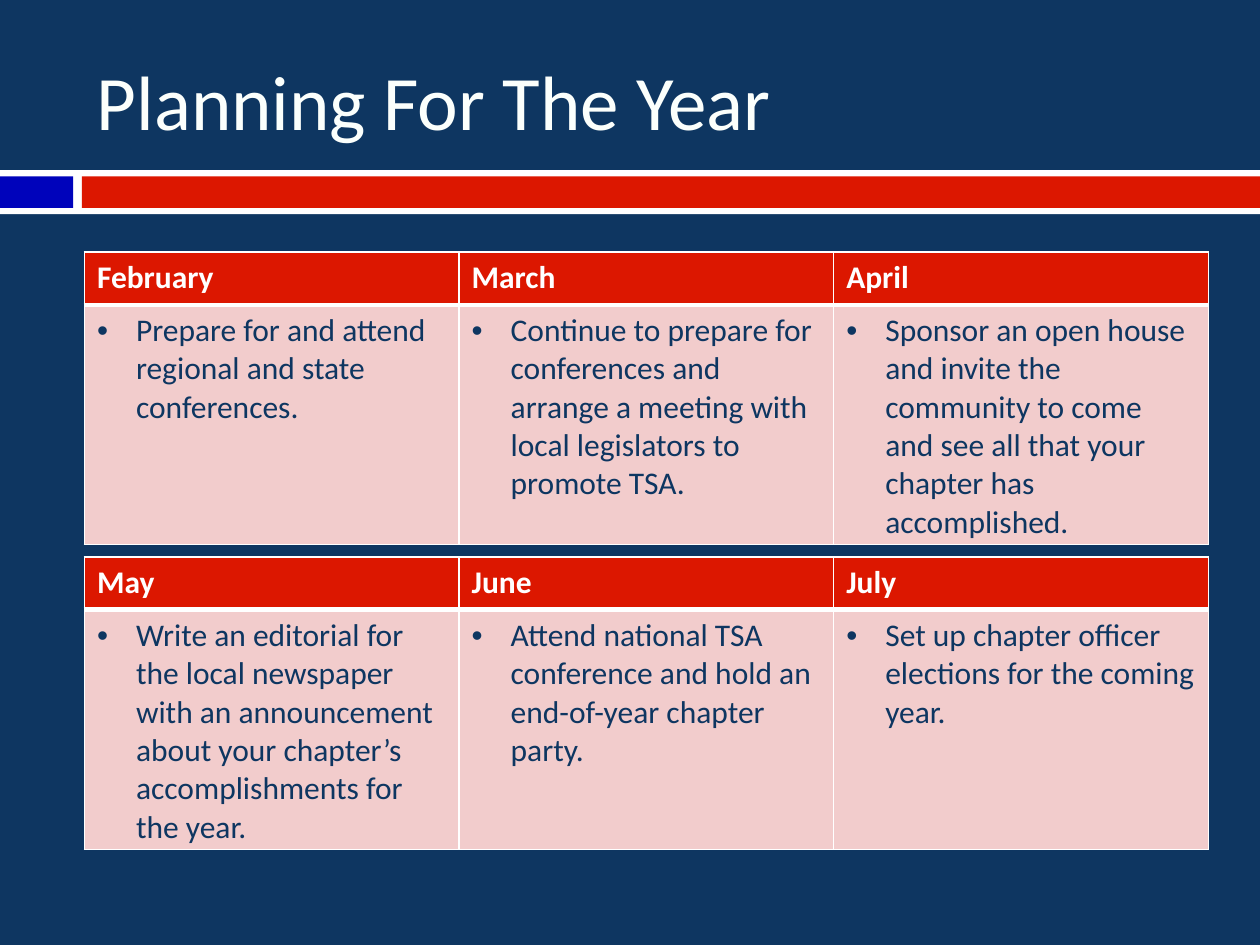
from dataclasses import dataclass

from lxml import etree
from pptx import Presentation
from pptx import util as u
from pptx.dml.color import RGBColor
from pptx.enum import shapes, text
from pptx.oxml.ns import qn

NAVY, RED, BLUE, PINK = "0E3661", "DC1700", "0003BB", "F2CCCC"
WHITE, OFF_WHITE = "FFFFFF", "FBFFFC"
LEFT, WIDTH = 0.67, 8.92
ROW_HEIGHTS = (0.42, 1.9)
INDENT = u.Inches(0.31)


@dataclass
class Bar:
    left: float
    top: float
    width: float
    height: float
    color: str


@dataclass
class Month:
    name: str
    task: str


BARS = [
    Bar(0, 1.35, 10, 0.35, WHITE),
    Bar(0, 1.4, 0.58, 0.25, BLUE),
    Bar(0.65, 1.4, 9.35, 0.25, RED),
]
SPRING = [
    Month("February", "Prepare for and attend regional and state conferences."),
    Month("March", "Continue to prepare for conferences and arrange a meeting "
                   "with local legislators to promote TSA."),
    Month("April", "Sponsor an open house and invite the community to come and "
                   "see all that your chapter has accomplished."),
]
SUMMER = [
    Month("May", "Write an editorial for the local newspaper with an announcement "
                 "about your chapter’s accomplishments for the year."),
    Month("June", "Attend national TSA conference and hold an end-of-year "
                  "chapter party."),
    Month("July", "Set up chapter officer elections for the coming year."),
]


def set_fill(fill, color: str) -> None:
    fill.solid()
    fill.fore_color.rgb = RGBColor.from_string(color)


def write(tf, content: str, *, size: float, color: str, bold: bool = False,
          bullet: bool = False) -> None:
    p = tf.paragraphs[0]
    if bullet:
        pPr = p._p.get_or_add_pPr()
        pPr.set("marL", str(INDENT))
        pPr.set("indent", str(-INDENT))
        etree.SubElement(pPr, qn("a:buFont"), typeface="Arial")
        etree.SubElement(pPr, qn("a:buChar"), char="•")
    r = p.add_run()
    r.text = content
    r.font.name = "Calibri"
    r.font.size = u.Pt(size)
    r.font.bold = bold
    set_fill(r.font.fill, color)


def draw_bar(s, bar: Bar) -> None:
    sp = s.shapes.add_shape(
        shapes.MSO_SHAPE.RECTANGLE, u.Inches(bar.left), u.Inches(bar.top),
        u.Inches(bar.width), u.Inches(bar.height))
    sp.shadow.inherit = False
    sp.line.fill.background()
    set_fill(sp.fill, bar.color)


def draw_title(s, content: str) -> None:
    tf = s.shapes.add_textbox(u.Inches(LEFT), u.Inches(0.25),
                              u.Inches(WIDTH), u.Inches(1.08)).text_frame
    tf.word_wrap = True
    tf.vertical_anchor = text.MSO_ANCHOR.MIDDLE
    write(tf, content, size=44, color=OFF_WHITE)


def style_cell(cell, color: str, top: float, bottom: float) -> None:
    tcPr = cell._tc.get_or_add_tcPr()
    for side, weight in (("L", 1), ("R", 1), ("T", top), ("B", bottom)):
        ln = etree.SubElement(tcPr, qn(f"a:ln{side}"), w=str(u.Pt(weight)))
        solid = etree.SubElement(ln, qn("a:solidFill"))
        etree.SubElement(solid, qn("a:srgbClr"), val=WHITE)
    set_fill(cell.fill, color)


def draw_months(s, top: float, months: list[Month]) -> None:
    table = s.shapes.add_table(
        len(ROW_HEIGHTS), len(months), u.Inches(LEFT), u.Inches(top),
        u.Inches(WIDTH), u.Inches(sum(ROW_HEIGHTS))).table
    for row, height in zip(table.rows, ROW_HEIGHTS):
        row.height = u.Inches(height)
    for i, month in enumerate(months):
        head, body = table.cell(0, i), table.cell(1, i)
        style_cell(head, RED, top=1, bottom=3)
        style_cell(body, PINK, top=3, bottom=1)
        write(head.text_frame, month.name, size=18, color=WHITE, bold=True)
        write(body.text_frame, month.task, size=18, color=NAVY, bullet=True)


def main() -> None:
    prs = Presentation()
    prs.slide_width, prs.slide_height = u.Inches(10), u.Inches(7.5)
    s = prs.slides.add_slide(prs.slide_layouts[6])
    set_fill(s.background.fill, NAVY)
    for bar in BARS:
        draw_bar(s, bar)
    draw_title(s, "Planning For The Year")
    draw_months(s, 4.42, SUMMER)
    draw_months(s, 2, SPRING)
    prs.save("out.pptx")


if __name__ == "__main__":
    main()
